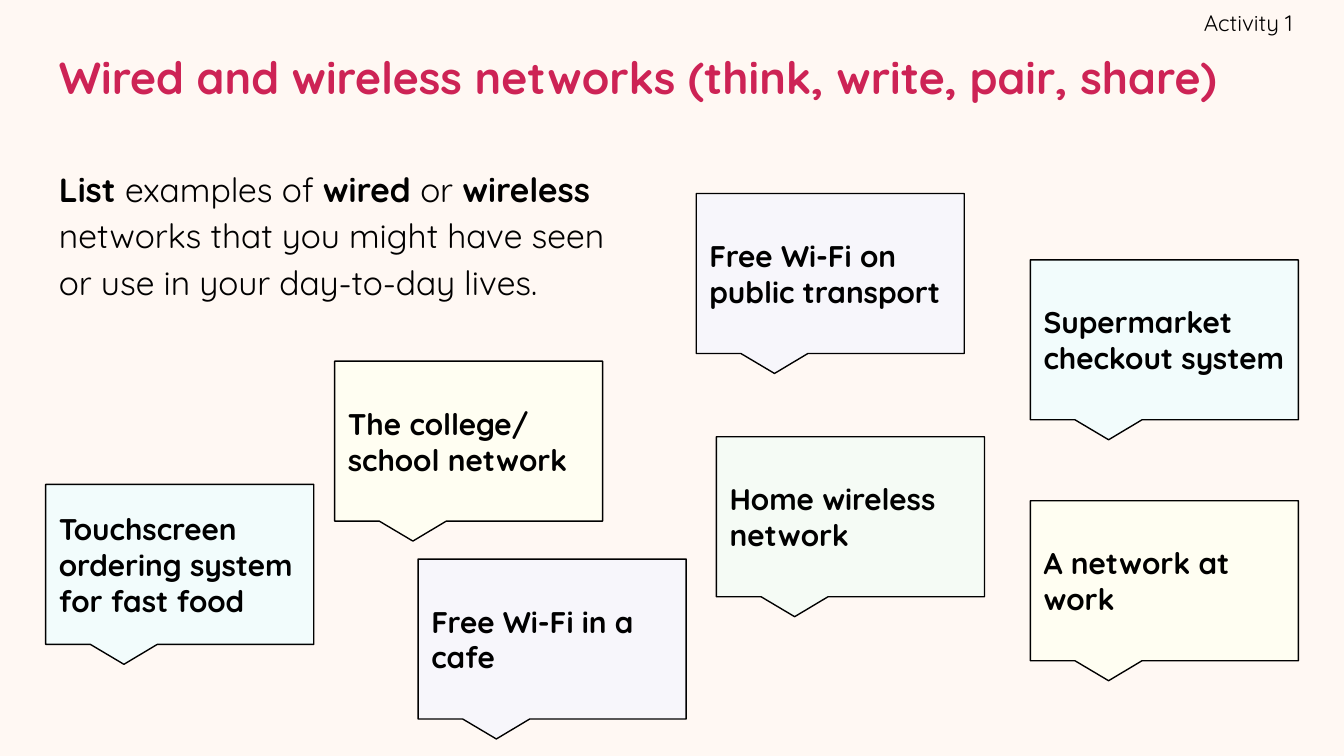
import pptx
import pptx.dml.color
import pptx.enum.shapes
import pptx.enum.text
import pptx.util

Pt = pptx.util.Pt
RGBColor = pptx.dml.color.RGBColor
Anchor = pptx.enum.text.MSO_ANCHOR
Align = pptx.enum.text.PP_ALIGN

CREAM = RGBColor(0xFF, 0xF8, 0xF3)
BLACK = RGBColor(0x00, 0x00, 0x00)
CRIMSON = RGBColor(0xCD, 0x23, 0x55)
GREEN = RGBColor(0xF5, 0xFB, 0xF5)
YELLOW = RGBColor(0xFF, 0xFE, 0xF2)
LILAC = RGBColor(0xF7, 0xF6, 0xFB)
BLUE = RGBColor(0xF2, 0xFC, 0xFC)

FONT = "Quicksand"
INSET = 7.2
LEFT_MARGIN = 24.5
CALLOUT_SIZE = (143.6, 85.7)
CALLOUT_POINTER = (-0.208, 0.625, 0)

CALLOUTS = [
    (383.8, 234, GREEN, "Home wireless network"),
    (179.3, 193.5, YELLOW, "The college/ school network"),
    (373, 103.7, LILAC, "Free Wi-Fi on public transport"),
    (552, 139.2, BLUE, "Supermarket checkout system"),
    (LEFT_MARGIN, 259.5, BLUE, "Touchscreen ordering system for fast food"),
    (552, 268.3, YELLOW, "A network at work"),
    (224, 299.5, LILAC, "Free Wi-Fi in a cafe"),
]

INSTRUCTION = [
    ("List ", True),
    ("examples of ", False),
    ("wired ", True),
    ("or ", False),
    ("wireless ", True),
    ("networks that you might have seen or use in your day-to-day lives.", False),
]


def set_values(target, values):
    for name, value in values.items():
        setattr(target, name, value)


def write_text(box, spans, size, colour=BLACK, anchor=Anchor.MIDDLE,
               right_inset=INSET, paragraph_format=None):
    frame = box.text_frame
    set_values(frame, {
        "word_wrap": True,
        "vertical_anchor": anchor,
        "margin_left": Pt(INSET),
        "margin_top": Pt(INSET),
        "margin_right": Pt(right_inset),
        "margin_bottom": Pt(INSET),
    })
    para = frame.paragraphs[0]
    set_values(para, {"alignment": Align.LEFT, **(paragraph_format or {})})
    for text, bold in spans:
        span = para.add_run()
        span.text = text
        set_values(span.font, {"name": FONT, "size": Pt(size), "bold": bold})
        span.font.color.rgb = colour


def add_text(page, bounds, spans, size, **style):
    box = page.shapes.add_textbox(*map(Pt, bounds))
    write_text(box, spans, size, **style)


def add_callout(page, left, top, fill, text):
    callout = page.shapes.add_shape(
        pptx.enum.shapes.MSO_SHAPE.ROUNDED_RECTANGULAR_CALLOUT,
        *map(Pt, (left, top, *CALLOUT_SIZE)))
    for index, value in enumerate(CALLOUT_POINTER):
        callout.adjustments[index] = value
    callout.shadow.inherit = False
    callout.fill.solid()
    callout.fill.fore_color.rgb = fill
    callout.line.color.rgb = BLACK
    callout.line.width = Pt(0.75)
    write_text(callout, [(text, True)], 16)


def main():
    deck = pptx.Presentation()
    set_values(deck, {"slide_width": Pt(720), "slide_height": Pt(405)})
    page = deck.slides.add_slide(deck.slide_layouts[6])
    page.background.fill.solid()
    page.background.fill.fore_color.rgb = CREAM

    add_text(page, (LEFT_MARGIN, 80, 322.5, 288), INSTRUCTION, 18,
             anchor=Anchor.TOP,
             paragraph_format={"line_spacing": 1.15, "space_after": Pt(16)})
    add_text(page, (LEFT_MARGIN, 13.7, 671, 54.7),
             [("Wired and wireless networks (think, write, pair, share)", True)],
             24, colour=CRIMSON)
    add_text(page, (538.5, 0, 154, 24.5), [("Activity 1", False)], 12,
             right_inset=0, paragraph_format={"alignment": Align.RIGHT})
    for callout in CALLOUTS:
        add_callout(page, *callout)

    deck.save("out.pptx")


if __name__ == "__main__":
    main()
